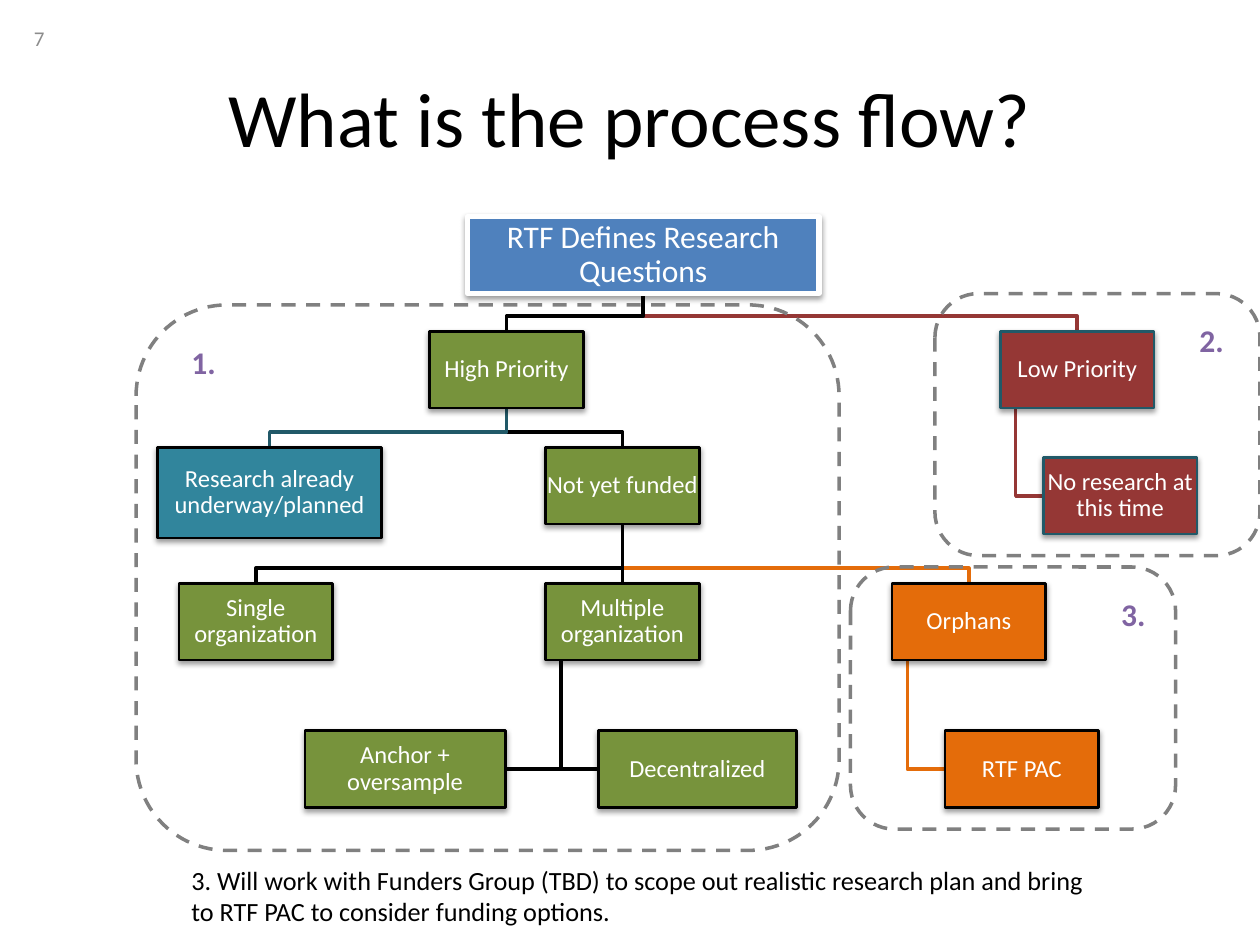
from lxml import etree
from pptx import Presentation
from pptx import util as u
from pptx.dml.color import RGBColor
from pptx.enum import dml, shapes, text
from pptx.oxml.ns import qn

BLACK, WHITE, GREY = "000000", "FFFFFF", "808080"
GREEN, TEAL, DARK_TEAL = "77933C", "31859C", "215968"
ORANGE, RED, BLUE, PURPLE = "E46C0A", "953735", "4F81BD", "8064A2"


def paint(color_format, hex_color):
    """Paint a fill, or a font or line colour, with a hex colour."""
    if hasattr(color_format, "solid"):
        color_format.solid()
        color_format = color_format.fore_color
    color_format.rgb = RGBColor.from_string(hex_color)


def write(shape, words, size, color, align=text.PP_ALIGN.LEFT, bold=False):
    paragraph = shape.text_frame.paragraphs[0]
    paragraph.text = words
    paragraph.alignment = align
    font = paragraph.runs[0].font
    font.name, font.size, font.bold = "Calibri", u.Pt(size), bold
    paint(font.color, color)
    return paragraph


presentation = Presentation()
presentation.slide_width, presentation.slide_height = u.Inches(10), u.Inches(7.5)
slide = presentation.slides.add_slide(presentation.slide_layouts[6])
canvas = slide.shapes

# Title and page number
for words, place, size, color, align in [
    ("What is the process flow?", (0.5, 0.3, 9, 1.25), 44, BLACK, text.PP_ALIGN.CENTER),
    ("7", (0.17, 0.1, 2.33, 0.4), 12, "8C8C8C", text.PP_ALIGN.LEFT),
]:
    heading = canvas.add_textbox(*map(u.Inches, place))
    heading.text_frame.word_wrap = True
    heading.text_frame.vertical_anchor = text.MSO_ANCHOR.MIDDLE
    write(heading, words, size, color, align)

# Steps: words, left, top, width, height, fill, border
W, H = 1.22, 0.61
steps = {
    "root": ("RTF Defines Research Questions", 3.71, 1.72, 2.79, H, BLUE, WHITE),
    "high": ("High Priority", 3.41, 2.63, W, H, GREEN, BLACK),
    "underway": ("Research already underway/planned", 1.25, 3.55, 1.78, 0.72, TEAL, BLACK),
    "unfunded": ("Not yet funded", 4.33, 3.55, W, H, GREEN, BLACK),
    "single": ("Single organization", 1.42, 4.63, W, H, GREEN, BLACK),
    "multiple": ("Multiple organization", 4.33, 4.63, W, H, GREEN, BLACK),
    "anchor": ("Anchor + oversample", 2.42, 5.8, 1.59, H, GREEN, BLACK),
    "decentralized": ("Decentralized", 4.75, 5.8, 1.57, H, GREEN, BLACK),
    "orphans": ("Orphans", 7.08, 4.63, W, H, ORANGE, BLACK),
    "pac": ("RTF PAC", 7.5, 5.8, W, H, ORANGE, BLACK),
    "low": ("Low Priority", 7.94, 2.63, W, H, RED, DARK_TEAL),
    "none": ("No research at this time", 8.28, 3.63, W, H, RED, DARK_TEAL),
}

# Bent branches: a tree branch enters the child from above, a hanging one from the side
for parent, child, color, hanging in [
    ("low", "none", RED, True),
    ("root", "low", RED, False),
    ("orphans", "pac", ORANGE, True),
    ("unfunded", "orphans", ORANGE, False),
    ("multiple", "decentralized", BLACK, True),
    ("multiple", "anchor", BLACK, True),
    ("unfunded", "single", BLACK, False),
    ("high", "unfunded", BLACK, False),
    ("high", "underway", DARK_TEAL, False),
    ("root", "high", BLACK, False),
]:
    _, px, py, pw, ph, _, _ = steps[parent]
    _, cx, cy, cw, ch, _, _ = steps[child]
    if hanging:
        stem, middle = px + pw / 10, cy + ch / 2
        side = cx if cx > stem else cx + cw
        points = [(stem, py + ph), (stem, middle), (side, middle)]
    else:
        stem, end, bend = px + pw / 2, cx + cw / 2, cy - 0.12
        points = [(stem, py + ph), (stem, bend), (end, bend), (end, cy)]
    start, *rest = [(u.Inches(x), u.Inches(y)) for x, y in points]
    outline = canvas.build_freeform(*start)
    outline.add_line_segments(rest, close=False)
    branch = outline.convert_to_shape()
    branch.shadow.inherit = False
    branch.fill.background()
    branch.line.width = u.Pt(2)
    paint(branch.line.color, color)

boxes = {}
for key, (words, left, top, width, height, fill, border) in steps.items():
    box = canvas.add_shape(shapes.MSO_SHAPE.RECTANGLE,
                           *map(u.Inches, (left, top, width, height)))
    boxes[key] = box
    paint(box.fill, fill)
    paint(box.line.color, border)
    box.line.width = u.Pt(3 if key == "root" else 1.5)
    box.shadow.inherit = False
    effects = box._element.spPr.find(qn("a:effectLst"))
    shadow = etree.SubElement(effects, qn("a:outerShdw"), blurRad="40000",
                              dist="20000", dir="5400000", rotWithShape="0")
    shade = etree.SubElement(shadow, qn("a:srgbClr"), val=BLACK)
    etree.SubElement(shade, qn("a:alpha"), val="38000")
    frame = box.text_frame
    frame.word_wrap = True
    frame.vertical_anchor = text.MSO_ANCHOR.MIDDLE
    frame.margin_left = frame.margin_right = u.Inches(0.01)
    frame.margin_top = frame.margin_bottom = u.Inches(0.01)
    label = write(box, words, 18 if key == "root" else 14, WHITE, text.PP_ALIGN.CENTER)
    label.line_spacing = 0.9

straight_branch = canvas.add_connector(shapes.MSO_CONNECTOR.STRAIGHT, 0, 0, 0, 0)
straight_branch.begin_connect(boxes["unfunded"], 2)
straight_branch.end_connect(boxes["multiple"], 0)
straight_branch.line.width = u.Pt(2)
paint(straight_branch.line.color, BLACK)
etree.SubElement(straight_branch._element.spPr, qn("a:effectLst"))

note = canvas.add_shape(shapes.MSO_SHAPE.RECTANGLE,
                        *map(u.Inches, (1.42, 6.81, 7.5, 0.61)))
note.shadow.inherit = False
paint(note.fill, WHITE)
note.line.fill.background()
note.text_frame.word_wrap = True
note.text_frame.vertical_anchor = text.MSO_ANCHOR.TOP
write(note, "3. Will work with Funders Group (TBD) to scope out realistic research plan "
            "and bring to RTF PAC to consider funding options.", 15, BLACK)

# Numbered dashed groups
for number, place, corner in [
    ("1.", (1.08, 2.42, 5.58, 4.33), (1.42, 2.67)),
    ("2.", (7.42, 2.33, 2.58, 2.08), (9.42, 2.5)),
    ("3.", (6.75, 4.5, 2.58, 2.08), (8.8, 4.67)),
]:
    group = canvas.add_shape(shapes.MSO_SHAPE.ROUNDED_RECTANGLE, *map(u.Inches, place))
    group.shadow.inherit = False
    group.fill.background()
    group.line.width = u.Pt(2)
    group.line.dash_style = dml.MSO_LINE.DASH
    paint(group.line.color, GREY)
    tag = canvas.add_textbox(*map(u.Inches, corner + (0.45, 0.4)))
    tag.text_frame.word_wrap = False
    write(tag, number, 18, PURPLE, bold=True)

presentation.save("out.pptx")
